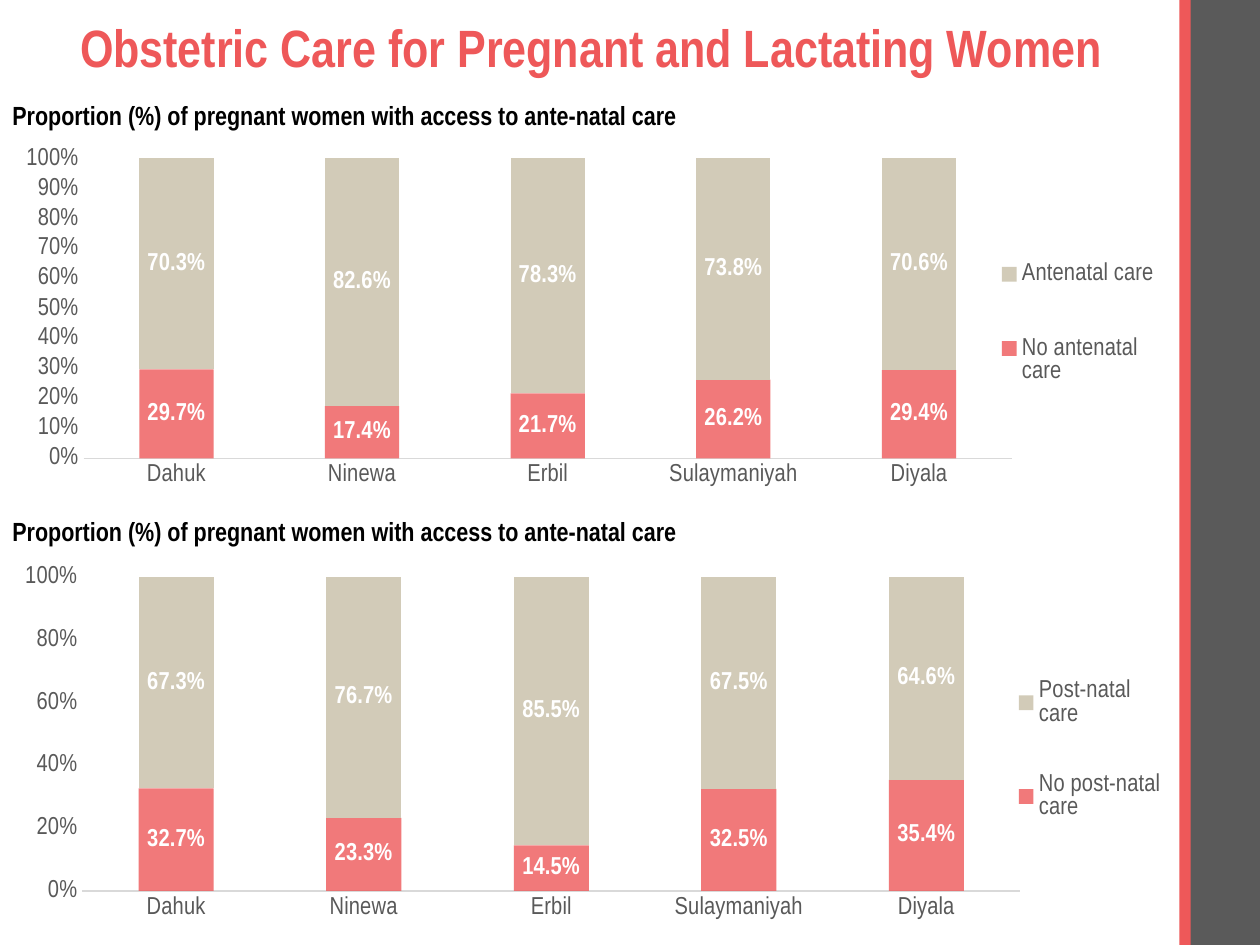
from lxml import etree
from pptx import Presentation
from pptx.chart import data
from pptx.dml.color import RGBColor
from pptx.enum import chart as ce, shapes, text
from pptx.oxml import ns
from pptx.util import Inches, Pt

FONT = "Arial Narrow"
CORAL, SAND, GREY, TEXT_GREY = "EE5859", "D2CBB8", "5A5A5A", "595959"
HEADING = "Proportion (%) of pregnant women with access to ante-natal care"
REGIONS = ["Dahuk", "Ninewa", "Erbil", "Sulaymaniyah", "Diyala"]


def style(font, color, size, bold=False):
    values = {"name": FONT, "size": Pt(size), "bold": bold}
    for key, value in values.items():
        setattr(font, key, value)
    font.color.rgb = RGBColor.from_string(color)


def set_layout(parent, index, box, inner=False):
    """Place a chart part at x, y, w, h given as fractions of the chart."""
    for old in parent.findall(ns.qn("c:layout")):
        parent.remove(old)
    layout = etree.Element(ns.qn("c:layout"))
    manual = etree.SubElement(layout, ns.qn("c:manualLayout"))
    items = [("layoutTarget", "inner")] if inner else []
    items += [("xMode", "edge"), ("yMode", "edge"), *zip("xywh", box)]
    for tag, value in items:
        etree.SubElement(manual, ns.qn(f"c:{tag}")).set("val", str(value))
    parent.insert(index, layout)


prs = Presentation()
prs.slide_width, prs.slide_height = Inches(10), Inches(7.5)
s = prs.slides.add_slide(prs.slide_layouts[6])

# Side bars
for left, width, color in [(9.43, 0.57, GREY), (9.36, 0.09, CORAL)]:
    sp = s.shapes.add_shape(shapes.MSO_SHAPE.RECTANGLE, Inches(left), 0,
                            Inches(width), Inches(7.5))
    sp.shadow.inherit = False
    sp.fill.solid()
    sp.fill.fore_color.rgb = RGBColor.from_string(color)
    sp.line.fill.background()

# Title and chart headings
center, left_align = text.PP_ALIGN.CENTER, text.PP_ALIGN.LEFT
for content, box, size, color, align in [
    ("Obstetric Care for Pregnant and Lactating Women",
     (0.35, 0, 8.69, 0.74), 30, CORAL, center),
    (HEADING, (0, 0.74, 8.74, 0.35), 15, "000000", left_align),
    (HEADING, (0, 4.04, 8.74, 0.35), 15, "000000", left_align),
]:
    tf = s.shapes.add_textbox(*map(Inches, box)).text_frame
    tf.word_wrap = True
    tf.vertical_anchor = text.MSO_ANCHOR.MIDDLE
    p = tf.paragraphs[0]
    p.alignment = align
    r = p.add_run()
    r.text = content
    style(r.font, color, size, True)

# Stacked charts: top, height, care name, shares without care, axis step, layouts
charts = [
    (1.09, 2.95, "antenatal care", [0.297, 0.174, 0.217, 0.262, 0.294], 0.1,
     (0.071, 0.057, 0.788, 0.807), (0.84, 0.2, 0.15, 0.6)),
    (4.4, 3.1, "post-natal care", [0.327, 0.233, 0.145, 0.325, 0.354], 0.2,
     (0.07, 0.058, 0.796, 0.804), (0.86, 0.2, 0.13, 0.6)),
]
for top, height, care, without, step, plot_box, legend_box in charts:
    cd = data.CategoryChartData(number_format="0.0%")
    cd.categories = REGIONS
    cd.add_series(f"No {care}", without)
    cd.add_series(care.capitalize(), [round(1 - v, 3) for v in without])
    chart = s.shapes.add_chart(ce.XL_CHART_TYPE.COLUMN_STACKED_100, 0, Inches(top),
                               Inches(9.35), Inches(height), cd).chart
    chart.has_title = False
    style(chart.font, "000000", 14)

    plot = chart.plots[0]
    plot.gap_width, plot.overlap, plot.vary_by_categories = 150, 100, False
    for series, color in zip(plot.series, [CORAL, SAND]):
        fill = series.format.fill
        fill.solid()
        fill.fore_color.rgb = RGBColor.from_string(color)
        if color == CORAL:
            rgb = series._element.find(".//" + ns.qn("a:srgbClr"))
            etree.SubElement(rgb, ns.qn("a:alpha")).set("val", "80000")
        labels = series.data_labels
        labels.show_value = True
        labels.number_format, labels.number_format_is_linked = "0.0%", False
        style(labels.font, "FFFFFF", 14, True)

    cat, val = chart.category_axis, chart.value_axis
    for axis in (cat, val):
        axis.has_major_gridlines = False
        axis.major_tick_mark = axis.minor_tick_mark = ce.XL_TICK_MARK.NONE
        style(axis.tick_labels.font, TEXT_GREY, 14)
    cat.format.line.color.rgb = RGBColor.from_string("D9D9D9")
    cat.format.line.width = Pt(0.75)
    val.format.line.fill.background()
    val.minimum_scale, val.maximum_scale, val.major_unit = 0, 1, step
    val.tick_labels.number_format = "0%"
    val.tick_labels.number_format_is_linked = False

    chart.has_legend = True
    legend = chart.legend
    legend.position = ce.XL_LEGEND_POSITION.RIGHT
    legend.include_in_layout = False
    style(legend.font, TEXT_GREY, 14)
    set_layout(legend._element, 1, legend_box)
    set_layout(chart._chartSpace.chart.plotArea, 0, plot_box, inner=True)

prs.save("out.pptx")
